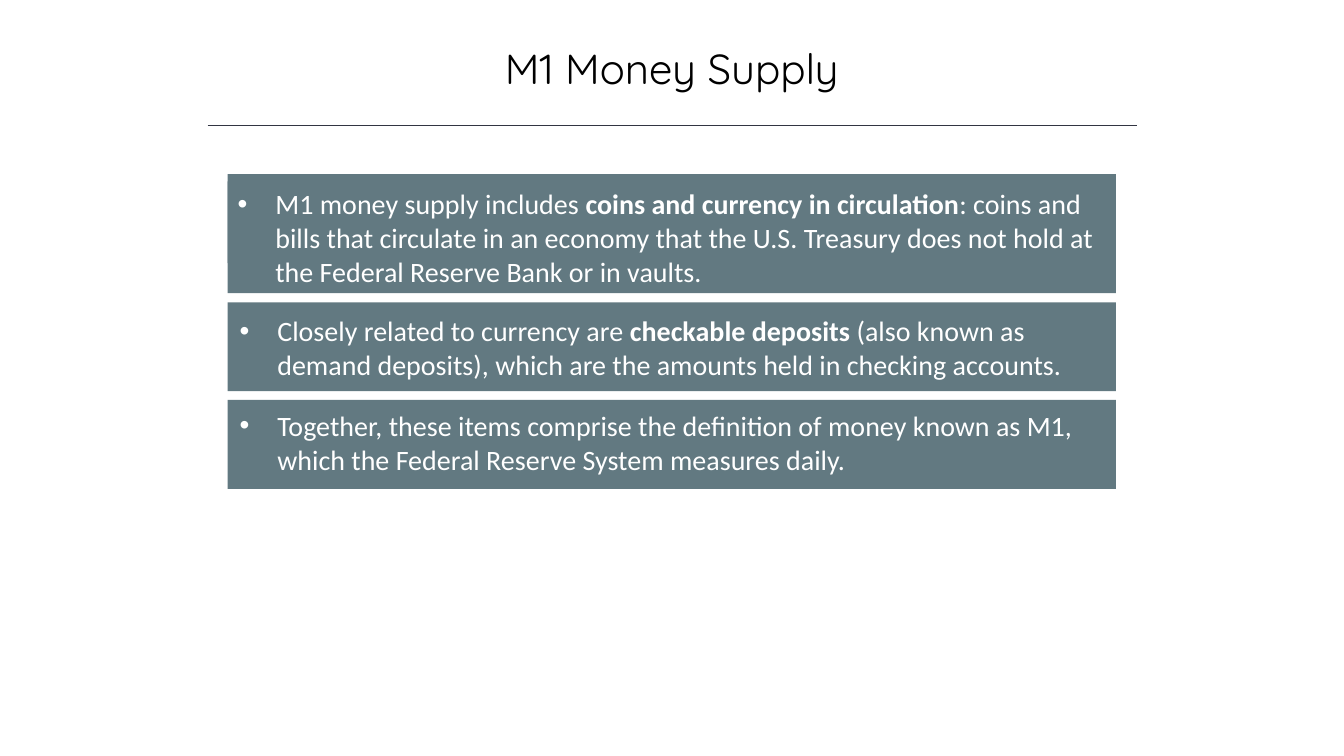
from collections import namedtuple
from pptx import Presentation
from pptx.dml.color import RGBColor
from pptx.enum.shapes import MSO_CONNECTOR, MSO_SHAPE
from pptx.enum.text import PP_ALIGN
from pptx.oxml.xmlchemy import OxmlElement
from pptx.util import Cm, Pt

Theme = namedtuple("Theme", "ink white slate rule head body head_size body_size")
theme = Theme(
    ink=RGBColor(0x00, 0x00, 0x00),
    white=RGBColor(0xFF, 0xFF, 0xFF),
    slate=RGBColor(0x62, 0x79, 0x81),
    rule=RGBColor(0x32, 0x35, 0x42),
    head="Quicksand",
    body="Calibri",
    head_size=Pt(30),
    body_size=Pt(20),
)


def add_run(para, text, face, size, color, bold=False):
    run = para.add_run()
    run.text = text
    run.font.name = face
    run.font.size = size
    run.font.bold = bold
    run.font.color.rgb = color


def add_block(left, top, width, height):
    block = slide.shapes.add_shape(
        MSO_SHAPE.RECTANGLE, Cm(left), Cm(top), Cm(width), Cm(height))
    block.shadow.inherit = False
    block.fill.solid()
    block.fill.fore_color.rgb = theme.slate
    block.line.fill.background()
    return block


deck = Presentation()
deck.slide_width, deck.slide_height = Cm(33.87), Cm(19.05)
slide = deck.slides.add_slide(deck.slide_layouts[6])

# Title
title = slide.shapes.add_textbox(Cm(4.23), Cm(0.94), Cm(25.4), Cm(1.54))
title.text_frame.word_wrap = True
para = title.text_frame.paragraphs[0]
para.alignment = PP_ALIGN.CENTER
add_run(para, "M1 Money Supply", theme.head, theme.head_size, theme.ink)

# Rule under the title
rule = slide.shapes.add_connector(
    MSO_CONNECTOR.STRAIGHT, Cm(5.23), Cm(3.16), Cm(28.65), Cm(3.16))
rule.line.color.rgb = theme.rule
rule.line.width = Pt(1)
rule._element.spPr.append(OxmlElement("a:effectLst"))

# Points: panel top, text area, runs as (text, bold)
points = [
    (4.39, (5.74, 4.57, 22.38, 2.82), [
        ("M1 money supply includes ", False),
        ("coins and currency in circulation", True),
        (": coins and bills that circulate in an economy that the U.S. Treasury "
         "does not hold at the Federal Reserve Bank or in vaults.", False)]),
    (7.62, (5.79, 7.77, 21.59, 1.96), [
        ("Closely related to currency are ", False),
        ("checkable deposits ", True),
        ("(also known as demand deposits), which are the amounts held in "
         "checking accounts.", False)]),
    (10.08, (5.79, 10.16, 22.3, 1.96), [
        ("Together, these items comprise the definition of money known as M1, "
         "which the Federal Reserve System measures daily.", False)]),
]

for top, area, runs in points:
    add_block(5.74, top, 22.38, 2.24)
    frame = add_block(*area).text_frame
    frame.word_wrap = True
    para = frame.paragraphs[0]
    para.alignment = PP_ALIGN.LEFT

    # Hanging bullet
    props = para._p.get_or_add_pPr()
    props.set("marL", str(Cm(0.95)))
    props.set("indent", str(-Cm(0.95)))
    font = OxmlElement("a:buFont")
    font.set("typeface", "Arial")
    mark = OxmlElement("a:buChar")
    mark.set("char", "•")
    props.extend([font, mark])

    for text, bold in runs:
        add_run(para, text, theme.body, theme.body_size, theme.white, bold)

deck.save("out.pptx")
